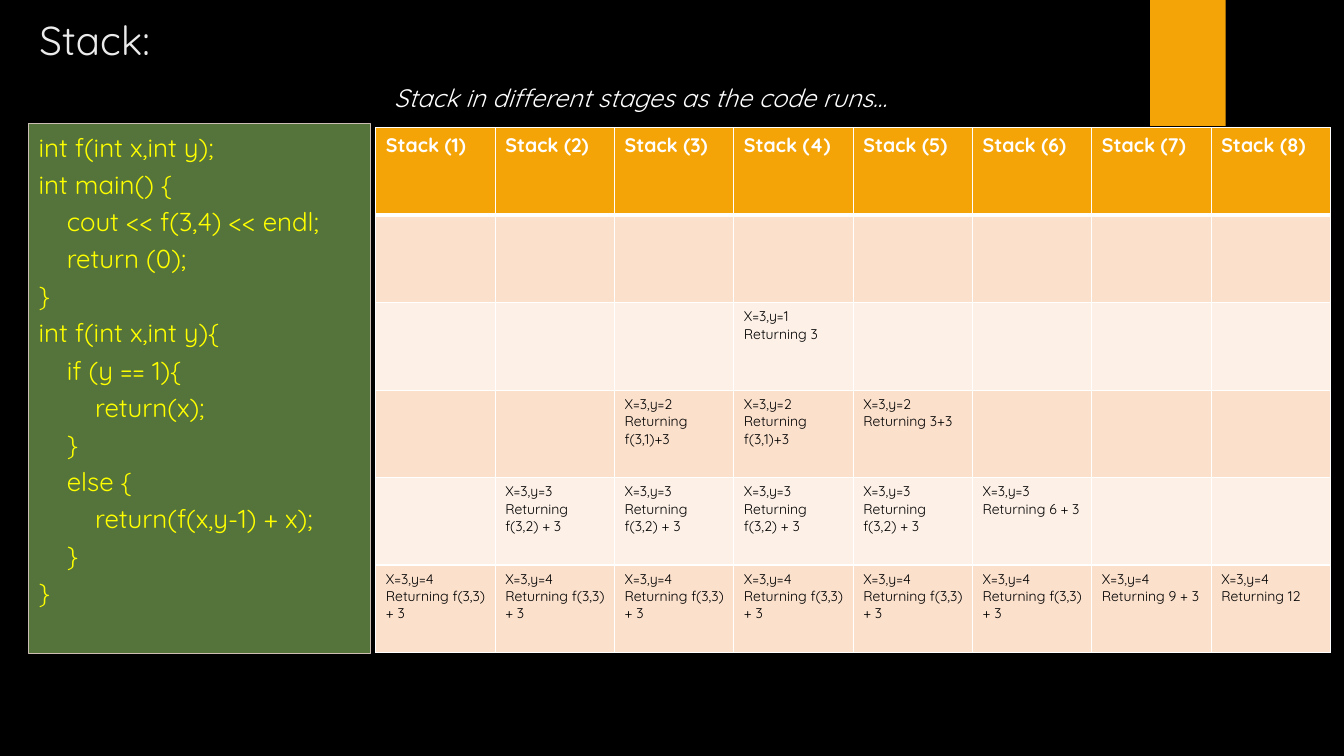
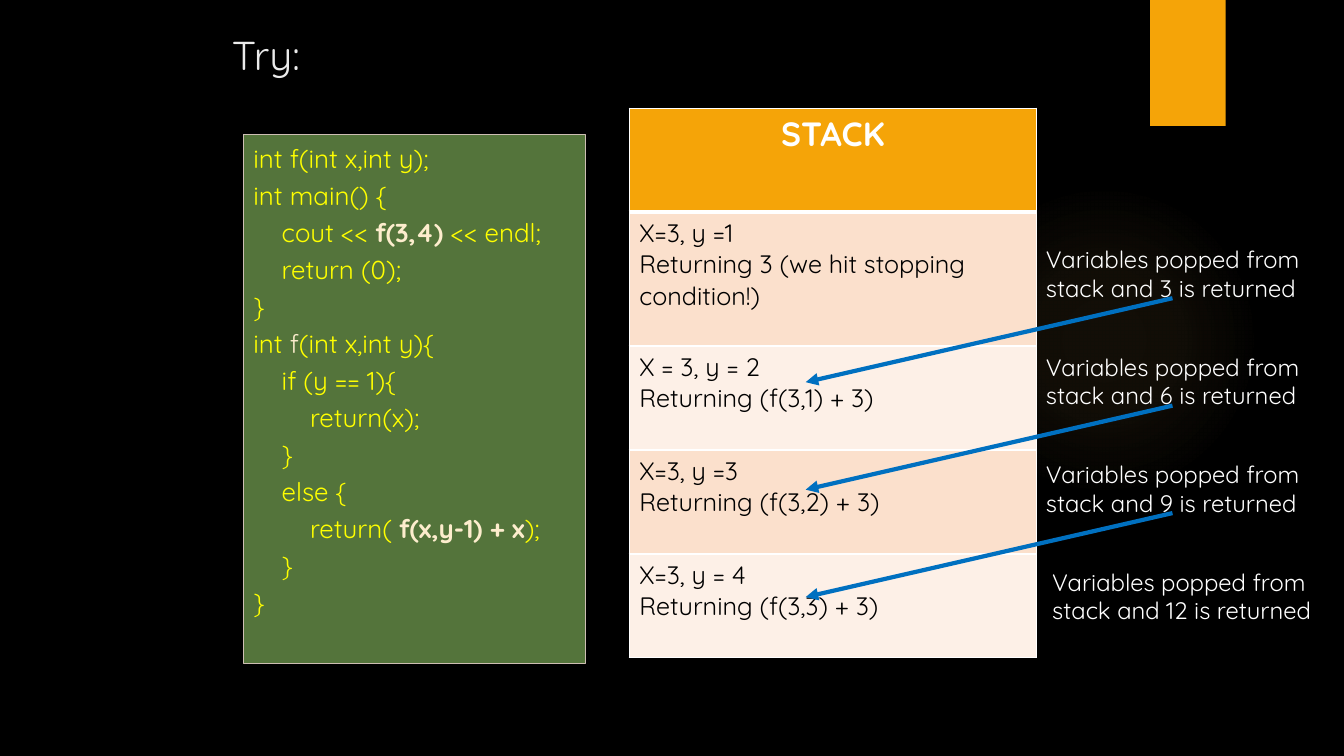
"""Build two slides that trace a recursive function on the call stack."""
from pptx import Presentation, util as u
from pptx.dml.color import RGBColor
from pptx.enum import shapes, text
from pptx.oxml import parse_xml
from pptx.oxml.ns import nsdecls

BLACK = RGBColor(0x00, 0x00, 0x00)
WHITE = RGBColor(0xFF, 0xFF, 0xFF)
TITLE = RGBColor(0xEB, 0xEB, 0xEB)
ORANGE = RGBColor(0xF5, 0xA4, 0x08)
GLOW = RGBColor(0xFA, 0xC9, 0x6A)
GREEN = RGBColor(0x54, 0x74, 0x3B)
TAUPE = RGBColor(0xCD, 0xBE, 0xB3)
YELLOW = RGBColor(0xFF, 0xFF, 0x00)
CREAM = RGBColor(0xFD, 0xED, 0xCD)
BLUE = RGBColor(0x00, 0x70, 0xC0)
BANDS = (RGBColor(0xFD, 0xF0, 0xE7), RGBColor(0xFB, 0xE0, 0xCC))

CODE = """int f(int x,int y);
int main() {
    cout << f(3,4) << endl;
    return (0);
}
int f(int x,int y){
    if (y == 1){
        return(x);
    }
    else {
        return(f(x,y-1) + x);
    }
}"""


class Deck:
    """Hold the shared style and the current slide."""

    font = "Quicksand"

    def __init__(self):
        self.prs = Presentation()
        self.prs.slide_width, self.prs.slide_height = u.Pt(960), u.Pt(540)
        backdrop = self.prs.slide_master.background.fill
        backdrop.solid()
        backdrop.fore_color.rgb = BLACK
        self.slide = None

    def start(self, title, left, top):
        """Add a slide with its glow, band and title."""
        self.slide = self.prs.slides.add_slide(self.prs.slide_layouts[5])
        self.glow(677.5, 132, 222)
        self.block(shapes.MSO_SHAPE.RECTANGLE, 821.5, 0, 54, 90, ORANGE)
        heading = self.slide.shapes.title
        heading.left, heading.top = u.Pt(left), u.Pt(top)
        heading.width, heading.height = u.Pt(556), u.Pt(66)
        frame = heading.text_frame
        frame.auto_size = text.MSO_AUTO_SIZE.NONE
        frame.vertical_anchor = text.MSO_ANCHOR.TOP
        frame.paragraphs[0].alignment = text.PP_ALIGN.LEFT
        self.add_words(frame.paragraphs[0], title, 28.8, TITLE)

    def add_words(self, paragraph, words, size, color, bold=False, italic=False):
        """Add one formatted run."""
        run = paragraph.add_run()
        run.text = words
        font = run.font
        font.name, font.size, font.bold, font.italic = self.font, u.Pt(size), bold, italic
        font.color.rgb = color

    def block(self, kind, left, top, width, height, fill=None):
        """Add a preset shape without line or shadow."""
        shape = self.slide.shapes.add_shape(kind, u.Pt(left), u.Pt(top), u.Pt(width), u.Pt(height))
        shape.shadow.inherit = False
        shape.line.fill.background()
        if fill is not None:
            shape.fill.solid()
            shape.fill.fore_color.rgb = fill
        return shape

    def glow(self, left, top, size):
        """Add a faint radial light."""
        light = self.block(shapes.MSO_SHAPE.OVAL, left, top, size, size)
        stops = "".join(
            f'<a:gs pos="{place}000"><a:srgbClr val="{GLOW}"><a:alpha val="{alpha}000"/></a:srgbClr></a:gs>'
            for place, alpha in ((0, 7), (36, 6), (69, 0)))
        light._element.spPr.insert(2, parse_xml(
            f'<a:gradFill {nsdecls("a")}><a:gsLst>{stops}</a:gsLst><a:path path="circle">'
            '<a:fillToRect l="50000" t="50000" r="50000" b="50000"/></a:path></a:gradFill>'))

    def code(self, left, top, listing, marks=None):
        """Add the code panel; marks maps a line to its stressed part and weight."""
        panel = self.block(shapes.MSO_SHAPE.RECTANGLE, left, top, 244, 378, GREEN)
        panel.line.color.rgb = TAUPE
        panel.line.width = u.Pt(0.75)
        frame = panel.text_frame
        frame.word_wrap = True
        frame.vertical_anchor = text.MSO_ANCHOR.TOP
        for number, line in enumerate(listing.split("\n")):
            paragraph = frame.add_paragraph() if number else frame.paragraphs[0]
            paragraph.alignment = text.PP_ALIGN.LEFT
            paragraph.line_spacing = 1.1
            if number:
                paragraph.space_before = u.Pt(2)
            stressed, bold = (marks or {}).get(number, (line, False))
            before, stressed, after = line.partition(stressed)
            color = CREAM if number in (marks or {}) else YELLOW
            for part, tone, weight in ((before, YELLOW, False), (stressed, color, bold),
                                       (after, YELLOW, False)):
                if part:
                    self.add_words(paragraph, part, 18.5, tone, weight)

    def table(self, left, top, width, heights, rows, head_size, size, align=None):
        """Add a banded table with white rules and a heading row."""
        count = len(rows[0])
        grid = self.slide.shapes.add_table(
            len(rows), count, u.Pt(left), u.Pt(top), u.Pt(width * count), u.Pt(sum(heights))).table
        for column in grid.columns:
            column.width = u.Pt(width)
        for r, (height, row) in enumerate(zip(heights, rows)):
            grid.rows[r].height = u.Pt(height)
            for c, words in enumerate(row):
                cell = grid.cell(r, c)
                self.rule(cell, top=3 if r == 1 else 1, bottom=1 if r else 3)
                cell.fill.solid()
                cell.fill.fore_color.rgb = BANDS[r % 2] if r else ORANGE
                for n, line in enumerate(words.split("\n") if words else ()):
                    frame = cell.text_frame
                    paragraph = frame.add_paragraph() if n else frame.paragraphs[0]
                    if r:
                        self.add_words(paragraph, line, size, BLACK)
                    else:
                        paragraph.alignment = align
                        self.add_words(paragraph, line, head_size, WHITE, bold=True)

    def rule(self, cell, top, bottom):
        """Draw the four white borders of a cell."""
        properties = cell._tc.get_or_add_tcPr()
        for side, weight in (("L", 1), ("R", 1), ("T", top), ("B", bottom)):
            properties.append(parse_xml(
                f'<a:ln{side} {nsdecls("a")} w="{u.Pt(weight)}"><a:solidFill>'
                f'<a:srgbClr val="{WHITE}"/></a:solidFill></a:ln{side}>'))

    def note(self, left, top, width, height, words, size, italic=False):
        """Add wrapped white text."""
        box = self.slide.shapes.add_textbox(u.Pt(left), u.Pt(top), u.Pt(width), u.Pt(height))
        box.text_frame.word_wrap = True
        self.add_words(box.text_frame.paragraphs[0], words, size, WHITE, italic=italic)

    def arrow(self, x1, y1, x2, y2):
        """Add a blue arrow."""
        line = self.slide.shapes.add_connector(
            shapes.MSO_CONNECTOR.STRAIGHT, u.Pt(x1), u.Pt(y1), u.Pt(x2), u.Pt(y2))
        line.line.color.rgb = BLUE
        line.line.width = u.Pt(3)
        properties = line._element.spPr
        properties.get_or_add_ln().append(parse_xml(f'<a:tailEnd {nsdecls("a")} type="triangle"/>'))
        properties.append(parse_xml(f'<a:effectLst {nsdecls("a")}/>'))


def stages_slide(deck):
    """Show the stack at every stage of the run."""
    deck.start("Stack:", 21, 7)
    deck.code(20.5, 88.5, CODE)
    stages = 8
    rows = [[f"Stack ({n})" for n in range(1, stages + 1)], [""] * stages]
    results = {1: ["3"],
               2: ["f(3,1)+3"] * 2 + ["3+3"],
               3: ["f(3,2) + 3"] * 4 + ["6 + 3"],
               4: ["f(3,3) + 3"] * 6 + ["9 + 3", "12"]}
    for y, values in results.items():
        frames = [""] * (4 - y) + [f"X=3,y={y}\nReturning {value}" for value in values]
        rows.append(frames + [""] * (stages - len(frames)))
    deck.table(268.5, 91.25, 85.25, [62.5] * 6, rows, 14, 10)
    deck.note(274.5, 55.5, 428, 29, "Stack in different stages as the code runs…", 18, italic=True)


def returns_slide(deck):
    """Show how each returned value reaches the call below."""
    deck.start("Try:", 158.5, 18)
    deck.code(174, 96, CODE.replace("return(f", "return( f"),
              {2: ("f(3,4) ", True), 5: ("f", False), 10: ("f(x,y-1) + x", True)})
    rows = [["STACK"],
            ["X=3, y =1\nReturning 3 (we hit stopping condition!)"],
            ["X = 3, y = 2\nReturning (f(3,1) + 3)"],
            ["X=3, y =3\nReturning (f(3,2) + 3)"],
            ["X=3, y = 4\nReturning (f(3,3) + 3)"]]
    deck.table(449.5, 77.25, 291, [74.25, 95.75, 74.25, 74.25, 74.25], rows, 24, 18,
               text.PP_ALIGN.CENTER)
    values = (3, 6, 9, 12)
    for n, value in enumerate(values):
        top = 171.5 + 76.75 * n
        last = value == values[-1]
        deck.note(744.5 if last else 740, top, 210, 48,
                  f"Variables popped from stack and {value} is returned", 17)
        if not last:
            deck.arrow(837.5, top + 41.5, 575.5, top + 101.5)


def main():
    """Build and save the deck."""
    deck = Deck()
    stages_slide(deck)
    returns_slide(deck)
    deck.prs.save("out.pptx")


if __name__ == "__main__":
    main()
